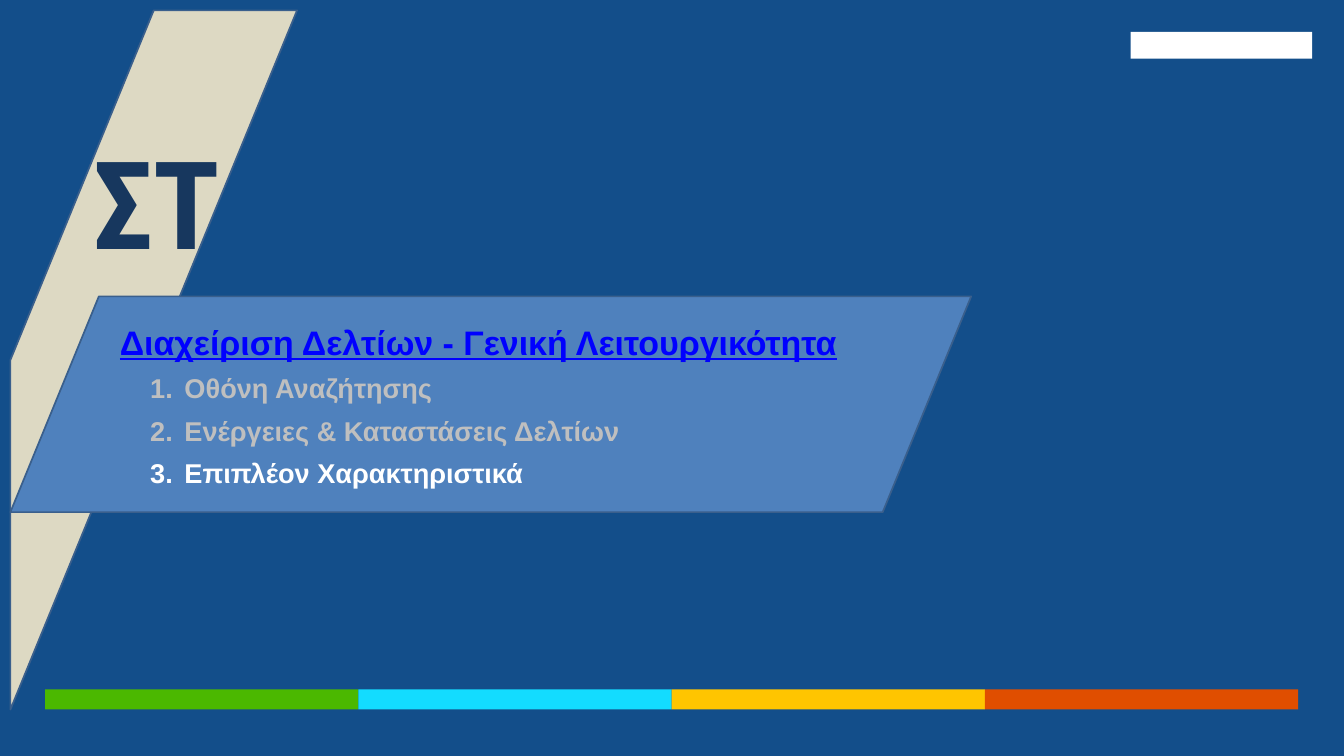
from lxml.etree import SubElement
from pptx import Presentation
from pptx.dml.color import RGBColor
from pptx.enum.shapes import MSO_SHAPE
from pptx.enum.text import MSO_ANCHOR, MSO_AUTO_SIZE, PP_ALIGN
from pptx.oxml.ns import qn
from pptx.util import Inches, Pt

NAVY = RGBColor(0x13, 0x4E, 0x8A)
SAND = RGBColor(0xDD, 0xD9, 0xC3)
BLUE = RGBColor(0x4F, 0x81, 0xBD)
EDGE = RGBColor(0x3A, 0x5F, 0x8C)
INK = RGBColor(0x17, 0x37, 0x5E)
LINK = RGBColor(0x00, 0x00, 0xFF)
GREY = RGBColor(0xBF, 0xBF, 0xBF)
WHITE = RGBColor(0xFF, 0xFF, 0xFF)
BARS = [
    RGBColor(0x4B, 0xB8, 0x00),
    RGBColor(0x13, 0xDC, 0xFF),
    RGBColor(0xFF, 0xC5, 0x00),
    RGBColor(0xE0, 0x4E, 0x00),
]

TOPICS = [
    ("Οθόνη Αναζήτησης", GREY),
    ("Ενέργειες & Καταστάσεις Δελτίων", GREY),
    ("Επιπλέον Χαρακτηριστικά", WHITE),
]


def add_block(slide, kind, left, top, width, height, fill, edge=None):
    block = slide.shapes.add_shape(
        kind, Inches(left), Inches(top), Inches(width), Inches(height))
    block.shadow.inherit = False
    block.fill.solid()
    block.fill.fore_color.rgb = fill
    if edge is None:
        block.line.fill.background()
    else:
        block.line.color.rgb = edge
        block.line.width = Pt(2)
    return block


def add_bars(slide):
    width = 5.125
    for i, color in enumerate(BARS):
        add_block(slide, MSO_SHAPE.RECTANGLE,
                  0.74 + i * width, 11.28, width, 0.33, color)


def set_font(par, size, color, name="Arial"):
    for run in par.runs:
        run.font.name = name
        run.font.size = Pt(size)
        run.font.bold = True
        run.font.color.rgb = color


def add_box(slide, left, top, width, height):
    box = slide.shapes.add_textbox(
        Inches(left), Inches(top), Inches(width), Inches(height))
    box.text_frame.word_wrap = True
    return box.text_frame


def add_letter(slide):
    par = add_box(slide, 1.18, 2.04, 2.76, 2.52).paragraphs[0]
    par.text = "ΣΤ"
    par.alignment = PP_ALIGN.CENTER
    set_font(par, 144, INK, "Roboto Condensed")


def set_title(slide):
    title = slide.shapes.title
    title.left, title.top = Inches(1.86), Inches(5.01)
    title.width, title.height = Inches(13.09), Inches(0.94)
    # Bring the title in front of the band
    title.element.getparent().append(title.element)
    frame = title.text_frame
    frame.text = "Διαχείριση Δελτίων - Γενική Λειτουργικότητα"
    frame.auto_size = MSO_AUTO_SIZE.NONE
    frame.vertical_anchor = MSO_ANCHOR.TOP
    par = frame.paragraphs[0]
    par.alignment = PP_ALIGN.LEFT
    par.line_spacing = 1.3
    set_font(par, 40, LINK)
    par.runs[0].font.underline = True


def add_number(par):
    props = par._p.get_or_add_pPr()
    props.set("marL", str(Inches(1.06)))
    props.set("indent", str(Inches(-0.56)))
    SubElement(props, qn("a:buFont"), typeface="Arial")
    SubElement(props, qn("a:buAutoNum"), type="arabicPeriod")


def add_topics(slide):
    frame = add_box(slide, 1.86, 5.87, 13.09, 2.1)
    for i, (text, color) in enumerate(TOPICS):
        par = frame.paragraphs[0] if i == 0 else frame.add_paragraph()
        par.text = text
        add_number(par)
        par.line_spacing = 1.3
        set_font(par, 32, color)


def main():
    deck = Presentation()
    deck.slide_width, deck.slide_height = Inches(21.99), Inches(12.37)
    slide = deck.slides.add_slide(deck.slide_layouts[5])
    slide.background.fill.solid()
    slide.background.fill.fore_color.rgb = NAVY

    add_block(slide, MSO_SHAPE.RECTANGLE, 18.5, 0.52, 2.97, 0.44, WHITE)
    add_block(slide, MSO_SHAPE.DIAGONAL_STRIPE,
              0.17, 0.17, 4.69, 11.44, SAND, EDGE)
    add_bars(slide)
    band = add_block(slide, MSO_SHAPE.PARALLELOGRAM,
                     0.17, 4.85, 15.72, 3.53, BLUE, EDGE)
    band.adjustments[0] = 0.41
    add_letter(slide)
    set_title(slide)
    add_topics(slide)
    deck.save("out.pptx")


if __name__ == "__main__":
    main()
